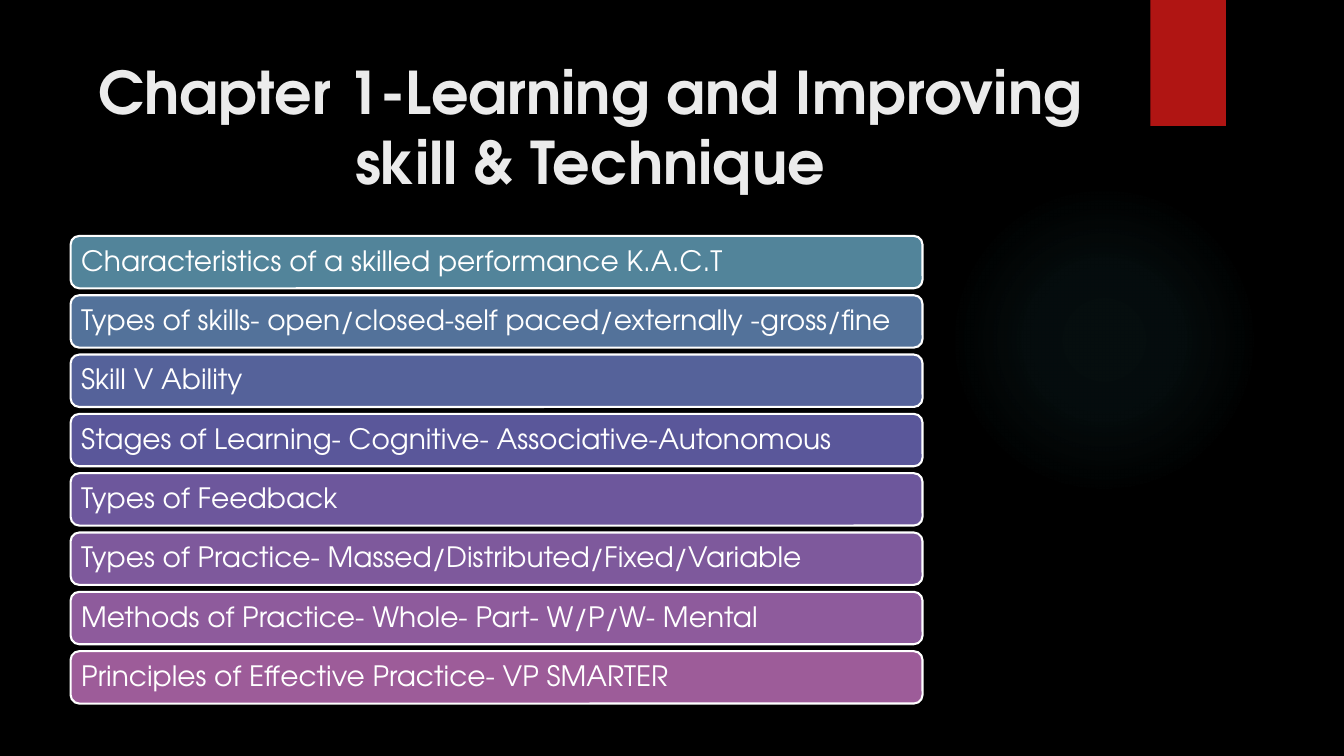
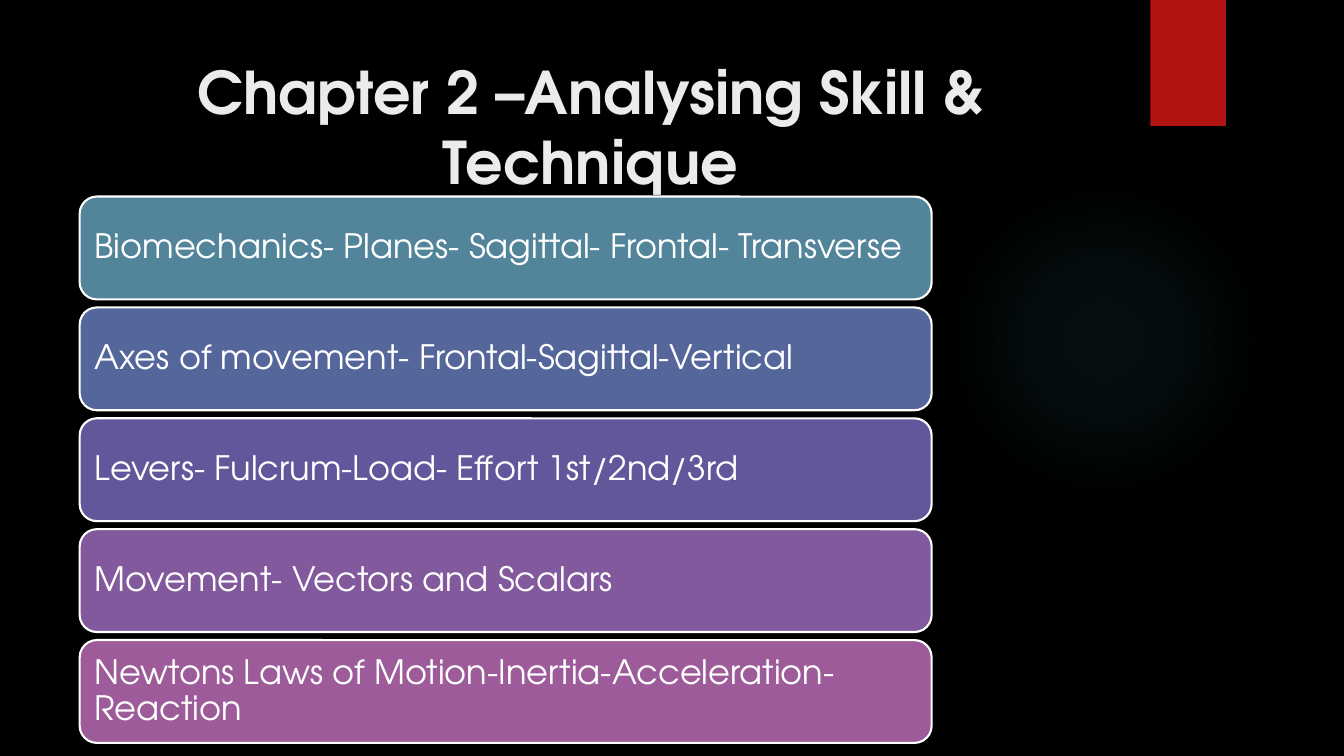
from pptx import Presentation
from pptx.dml.color import RGBColor
from pptx.enum.shapes import MSO_SHAPE
from pptx.enum.text import MSO_ANCHOR, PP_ALIGN
from pptx.oxml import parse_xml
from pptx.oxml.ns import nsdecls
from pptx.util import Inches, Pt

FONT = "TeX Gyre Adventor"
BLACK, WHITE = "000000", "FFFFFF"
TITLE_COLOUR, RIBBON_RED, GLOW_TEAL = "EBEBEB", "B01513", "4CB9C3"
GLOW_STOPS = [(0, 7), (36, 6), (69, 0), (100, 0)]  # position %, opacity %
BAR_WIDTH = 8.45

# Each chapter: title, position and text size of its bars, then (text, fill)
CHAPTERS = [
    {
        "title": "Chapter 1-Learning and Improving skill & Technique",
        "left": 0.7, "top": 2.34, "bottom": 6.98, "bar_height": 0.52,
        "inset": 0.08, "size": 20,
        "topics": [
            ("Characteristics of a skilled performance K.A.C.T", "52849A"),
            ("Types of skills- open/closed-self paced/externally -gross/fine", "53729A"),
            ("Skill V Ability", "55629A"),
            ("Stages of Learning- Cognitive- Associative-Autonomous", "5A579A"),
            ("Types of Feedback", "6D579C"),
            ("Types of Practice- Massed/Distributed/Fixed/Variable", "7E599C"),
            ("Methods of Practice- Whole- Part- W/P/W- Mental", "8E5B9C"),
            ("Principles of Effective Practice- VP SMARTER", "9D5C99"),
        ],
    },
    {
        "title": "Chapter 2 –Analysing Skill & Technique",
        "left": 0.79, "top": 1.95, "bottom": 7.37, "bar_height": 1.02,
        "inset": 0.1, "size": 24,
        "topics": [
            ("Biomechanics- Planes- Sagittal- Frontal- Transverse", "52849A"),
            ("Axes of movement- Frontal-Sagittal-Vertical", "55669A"),
            ("Levers- Fulcrum-Load- Effort 1st/2nd/3rd", "63579B"),
            ("Movement- Vectors and Scalars", "82599C"),
            ("Newtons Laws of Motion-Inertia-Acceleration-Reaction", "9D5C99"),
        ],
    },
]


def colour(hex_string):
    return RGBColor.from_string(hex_string)


def add_plain_shape(page, preset, left, top, width, height, fill):
    shape = page.shapes.add_shape(
        preset, Inches(left), Inches(top), Inches(width), Inches(height))
    shape.shadow.inherit = False
    shape.fill.solid()
    shape.fill.fore_color.rgb = colour(fill)
    shape.line.fill.background()
    return shape


def write_text(shape, text, size, text_colour, align, bold=False):
    frame = shape.text_frame
    frame.word_wrap = True
    frame.text = text
    para = frame.paragraphs[0]
    para.alignment = align
    font = para.runs[0].font
    font.name, font.size, font.bold = FONT, Pt(size), bold
    font.color.rgb = colour(text_colour)
    return para


def add_glow(page):
    glow = add_plain_shape(page, MSO_SHAPE.OVAL, 9.41, 1.83, 3.08, 3.08, GLOW_TEAL)
    stops = "".join(
        f'<a:gs pos="{position * 1000}"><a:srgbClr val="{GLOW_TEAL}">'
        f'<a:alpha val="{opacity * 1000}"/></a:srgbClr></a:gs>'
        for position, opacity in GLOW_STOPS)
    gradient = parse_xml(
        f'<a:gradFill {nsdecls("a")}><a:gsLst>{stops}</a:gsLst><a:path path="circle">'
        '<a:fillToRect l="50000" t="50000" r="50000" b="50000"/></a:path></a:gradFill>')
    properties = glow.element.spPr
    properties.replace(properties.find("{*}solidFill"), gradient)


def add_chapter_page(deck):
    page = deck.slides.add_slide(deck.slide_layouts[6])
    page.background.fill.solid()
    page.background.fill.fore_color.rgb = colour(BLACK)
    add_glow(page)
    add_plain_shape(page, MSO_SHAPE.RECTANGLE, 11.41, 0, 0.75, 1.25, RIBBON_RED)
    return page


def add_title(page, text):
    box = page.shapes.add_textbox(Inches(0.71), Inches(0.5), Inches(10.29), Inches(1.53))
    write_text(box, text, 42, TITLE_COLOUR, PP_ALIGN.CENTER, bold=True)


def add_bar(page, chapter, top, text, fill):
    bar = add_plain_shape(page, MSO_SHAPE.ROUNDED_RECTANGLE, chapter["left"], top,
                          BAR_WIDTH, chapter["bar_height"], fill)
    bar.line.color.rgb = colour(WHITE)
    bar.line.width = Pt(1.5)
    para = write_text(bar, text, chapter["size"], WHITE, PP_ALIGN.LEFT)
    para.line_spacing = 0.9
    frame = bar.text_frame
    frame.vertical_anchor = MSO_ANCHOR.MIDDLE
    frame.margin_left = frame.margin_right = Inches(chapter["inset"])
    frame.margin_top = frame.margin_bottom = Inches(chapter["inset"])


def add_topic_bars(page, chapter):
    # Spread the bars evenly between top and bottom
    topics = chapter["topics"]
    travel = chapter["bottom"] - chapter["top"] - chapter["bar_height"]
    step = travel / (len(topics) - 1)
    for index, (text, fill) in enumerate(topics):
        add_bar(page, chapter, chapter["top"] + index * step, text, fill)


def main():
    deck = Presentation()
    deck.slide_width, deck.slide_height = Inches(13.33), Inches(7.5)
    for chapter in CHAPTERS:
        page = add_chapter_page(deck)
        add_title(page, chapter["title"])
        add_topic_bars(page, chapter)
    deck.save("out.pptx")


if __name__ == "__main__":
    main()
